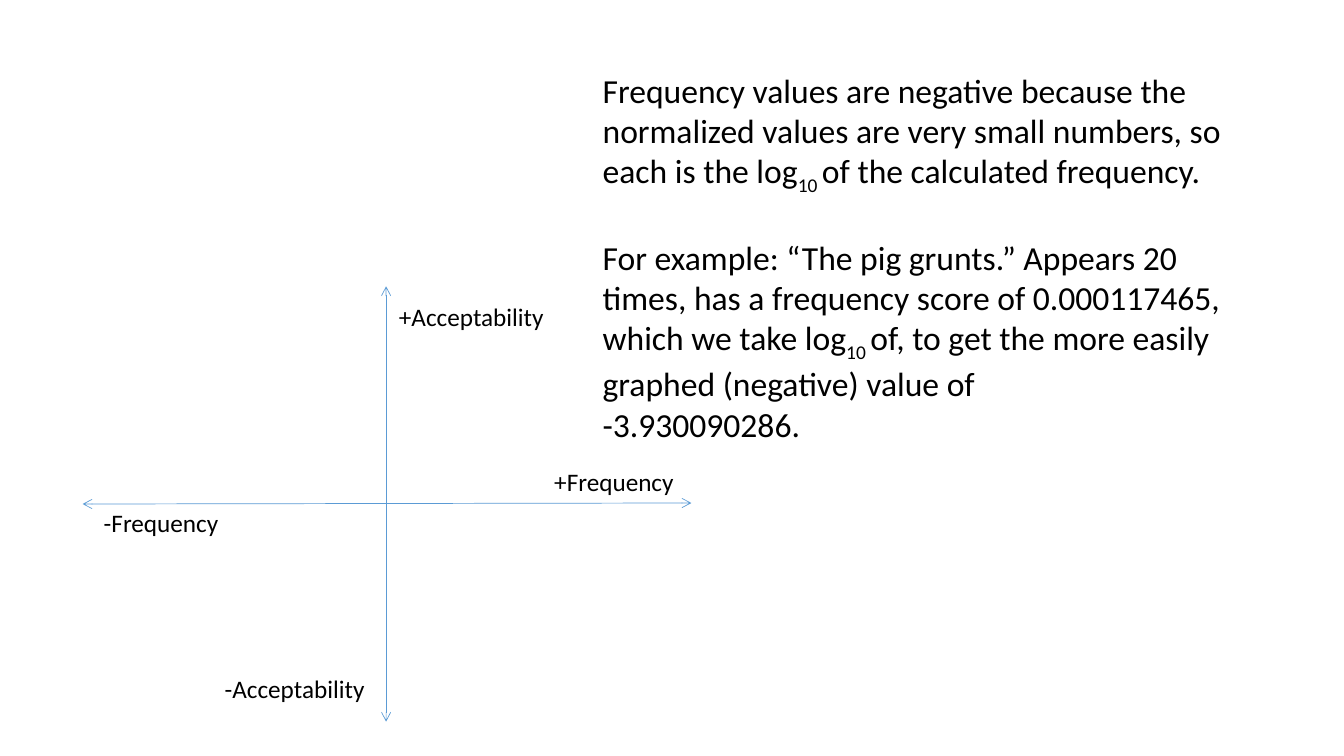
"""Build the slide explaining the frequency and acceptability axes."""
from typing import NamedTuple

from lxml import etree
from pptx import Presentation
from pptx import util as u
from pptx.dml.color import RGBColor
from pptx.enum import shapes, text
from pptx.oxml import ns

COLORS = {"axis": "5B9BD5", "text": "000000"}
FONT = "Calibri"


class Axis(NamedTuple):
    """A double-headed axis, in points."""
    x1: float
    y1: float
    x2: float
    y2: float


class Label(NamedTuple):
    """A text box with paragraphs made of (text, is_subscript) runs."""
    paragraphs: list[list[tuple[str, bool]]]
    left: float
    top: float
    width: float
    height: float = 28.8
    size: float = 18
    gaps: tuple[float, ...] = (0,)


AXES = [Axis(493.9, 359.3, 59, 360), Axis(275.8, 204.5, 275.8, 515.5)]

EXPLANATION = [
    [("Frequency values are negative because the normalized values are very "
      "small numbers, so each is the log", False),
     ("10 ", True),
     ("of the calculated frequency.", False)],
    [("For example: “The pig grunts.” Appears 20 times, has a frequency score "
      "of 0.000117465, which we take log", False),
     ("10 ", True),
     ("of, to get the more easily graphed (negative) value of", False)],
    [("-3.930090286.", False)],
]

LABELS = [
    Label([[("+Frequency", False)]], 388.8, 329.8, 106.6),
    Label([[("+Acceptability", False)]], 277.9, 211.7, 122.4),
    Label([[("-Frequency", False)]], 67, 358.6, 106.6),
    Label([[("-Acceptability", False)]], 153.4, 477.4, 122.4),
    Label(EXPLANATION, 423.4, 46.1, 480.2, 269.3, 24, (0, 29, 0)),
]


def draw_axis(slide, axis: Axis) -> None:
    """Draw a thin line with an open arrowhead at each end."""
    points = [u.Pt(v) for v in axis]
    s = slide.shapes.add_connector(shapes.MSO_CONNECTOR.STRAIGHT, *points)
    s.line.width = u.Pt(0.5)
    s.line.color.rgb = RGBColor.from_string(COLORS["axis"])
    ln = s.line._get_or_add_ln()
    for end in ("headEnd", "tailEnd"):
        etree.SubElement(ln, ns.qn(f"a:{end}"), type="arrow")
    etree.SubElement(s._element.spPr, ns.qn("a:effectLst"))


def draw_label(slide, label: Label) -> None:
    """Draw a text box with its paragraphs and subscripts."""
    box = (label.left, label.top, label.width, label.height)
    s = slide.shapes.add_textbox(*(u.Pt(v) for v in box))
    tf = s.text_frame
    tf.word_wrap = True
    tf.auto_size = text.MSO_AUTO_SIZE.SHAPE_TO_FIT_TEXT
    for i, (runs, gap) in enumerate(zip(label.paragraphs, label.gaps)):
        p = tf.add_paragraph() if i else tf.paragraphs[0]
        p.space_before = u.Pt(gap)
        for content, subscript in runs:
            r = p.add_run()
            r.text = content
            r.font.name = FONT
            r.font.size = u.Pt(label.size)
            r.font.color.rgb = RGBColor.from_string(COLORS["text"])
            if subscript:
                r.font._element.set("baseline", "-25000")


def main() -> None:
    """Create and save the presentation."""
    prs = Presentation()
    prs.slide_width, prs.slide_height = u.Pt(960), u.Pt(540)
    slide = prs.slides.add_slide(prs.slide_layouts[6])
    for axis in AXES:
        draw_axis(slide, axis)
    for label in LABELS:
        draw_label(slide, label)
    prs.save("out.pptx")


if __name__ == "__main__":
    main()
